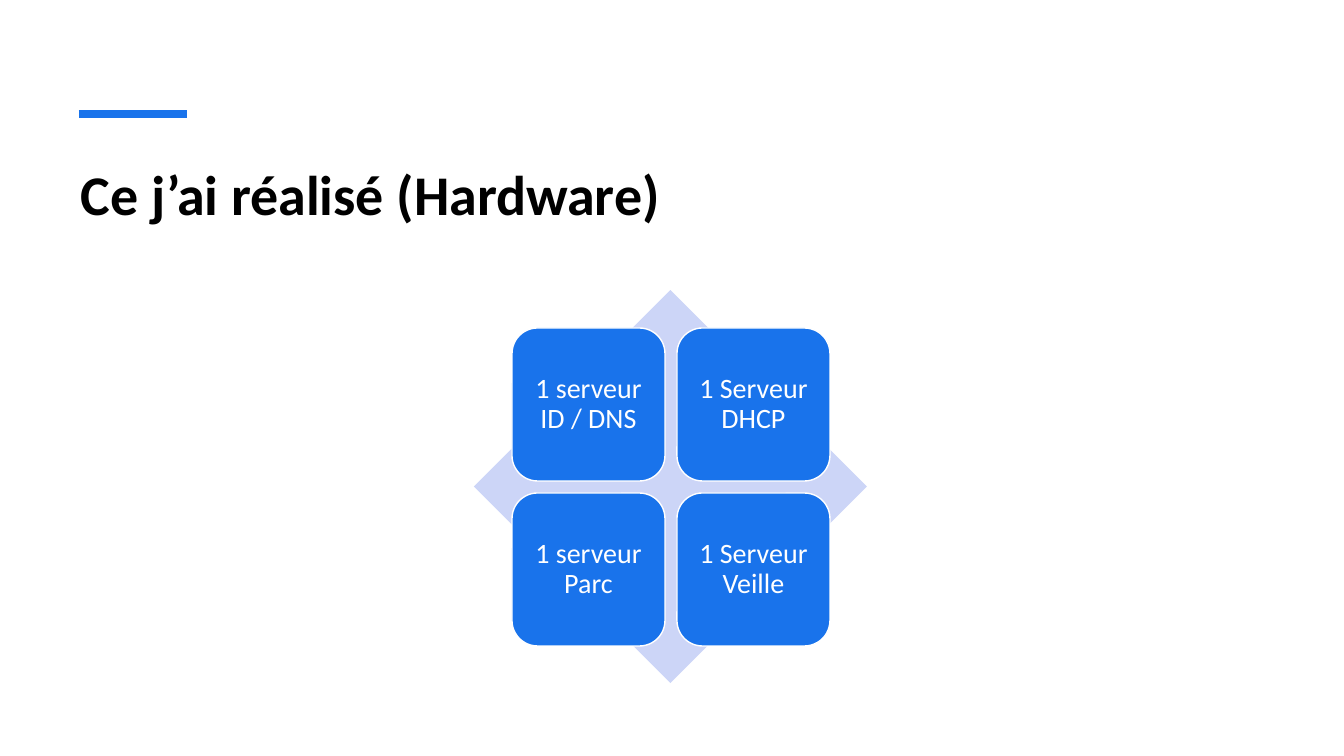
from lxml import etree
from pptx import Presentation
from pptx import util as u
from pptx.dml.color import RGBColor
from pptx.enum import shapes, text
from pptx.oxml.ns import qn

PX = 914400 / 100.8
BLUE, PALE, WHITE, BLACK = "1973EB", "CCD5F7", "FFFFFF", "000000"


def color(target, value):
    """Give a fill, line or font a solid hex colour."""
    if hasattr(target, "solid"):
        target.solid()
        target.fore_color.rgb = RGBColor.from_string(value)
    else:
        target.color.rgb = RGBColor.from_string(value)


def write(shape, words, size, ink, bold=False, align=text.PP_ALIGN.LEFT,
          anchor=text.MSO_ANCHOR.TOP, inset=(10, 8), spacing=1.0):
    frame = shape.text_frame
    frame.word_wrap = True
    frame.auto_size = text.MSO_AUTO_SIZE.NONE
    frame.vertical_anchor = anchor
    frame.margin_left = frame.margin_right = u.Emu(round(inset[0] * PX))
    frame.margin_top = frame.margin_bottom = u.Emu(round(inset[1] * PX))
    paragraph = frame.paragraphs[0]
    paragraph.alignment = align
    paragraph.line_spacing = spacing
    run = paragraph.add_run()
    run.text = words
    run.font.name = "Calibri"
    run.font.size = u.Pt(size)
    run.font.bold = bold
    color(run.font, ink)


presentation = Presentation()
presentation.slide_width = u.Emu(round(1344 * PX))
presentation.slide_height = u.Emu(round(756 * PX))
slide = presentation.slides.add_slide(presentation.slide_layouts[5])

# Accent line above the title
ends = [u.Emu(round(value * PX)) for value in (79, 114, 187, 114)]
accent = slide.shapes.add_connector(shapes.MSO_CONNECTOR.STRAIGHT, *ends)
color(accent.line, BLUE)
accent.line.width = u.Pt(6)
etree.SubElement(accent._element.spPr, qn("a:effectLst"))

# Title
title = slide.shapes.title
title.left, title.top, title.width, title.height = [
    u.Emu(round(value * PX)) for value in (71, 151, 1200, 121)]
write(title, "Ce j’ai réalisé (Hardware)", 40, BLACK, bold=True)

# Diamond behind the servers
box = [u.Emu(round(value * PX)) for value in (474, 290, 393, 393)]
diamond = slide.shapes.add_shape(shapes.MSO_SHAPE.DIAMOND, *box)
diamond.shadow.inherit = False
color(diamond.fill, PALE)
diamond.line.fill.background()

# Two by two grid of servers
servers = ["1 serveur ID / DNS", "1 Serveur DHCP",
           "1 serveur Parc", "1 Serveur Veille"]
side, gap = 153, 12
for index, server in enumerate(servers):
    row, column = divmod(index, 2)
    left = 512 + column * (side + gap)
    top = 328 + row * (side + gap)
    box = [u.Emu(round(value * PX)) for value in (left, top, side, side)]
    tile = slide.shapes.add_shape(shapes.MSO_SHAPE.ROUNDED_RECTANGLE, *box)
    tile.shadow.inherit = False
    color(tile.fill, BLUE)
    color(tile.line, WHITE)
    tile.line.width = u.Pt(1)
    write(tile, server, 20, WHITE, align=text.PP_ALIGN.CENTER,
          anchor=text.MSO_ANCHOR.MIDDLE, inset=(8, 8), spacing=0.9)

presentation.save("out.pptx")
